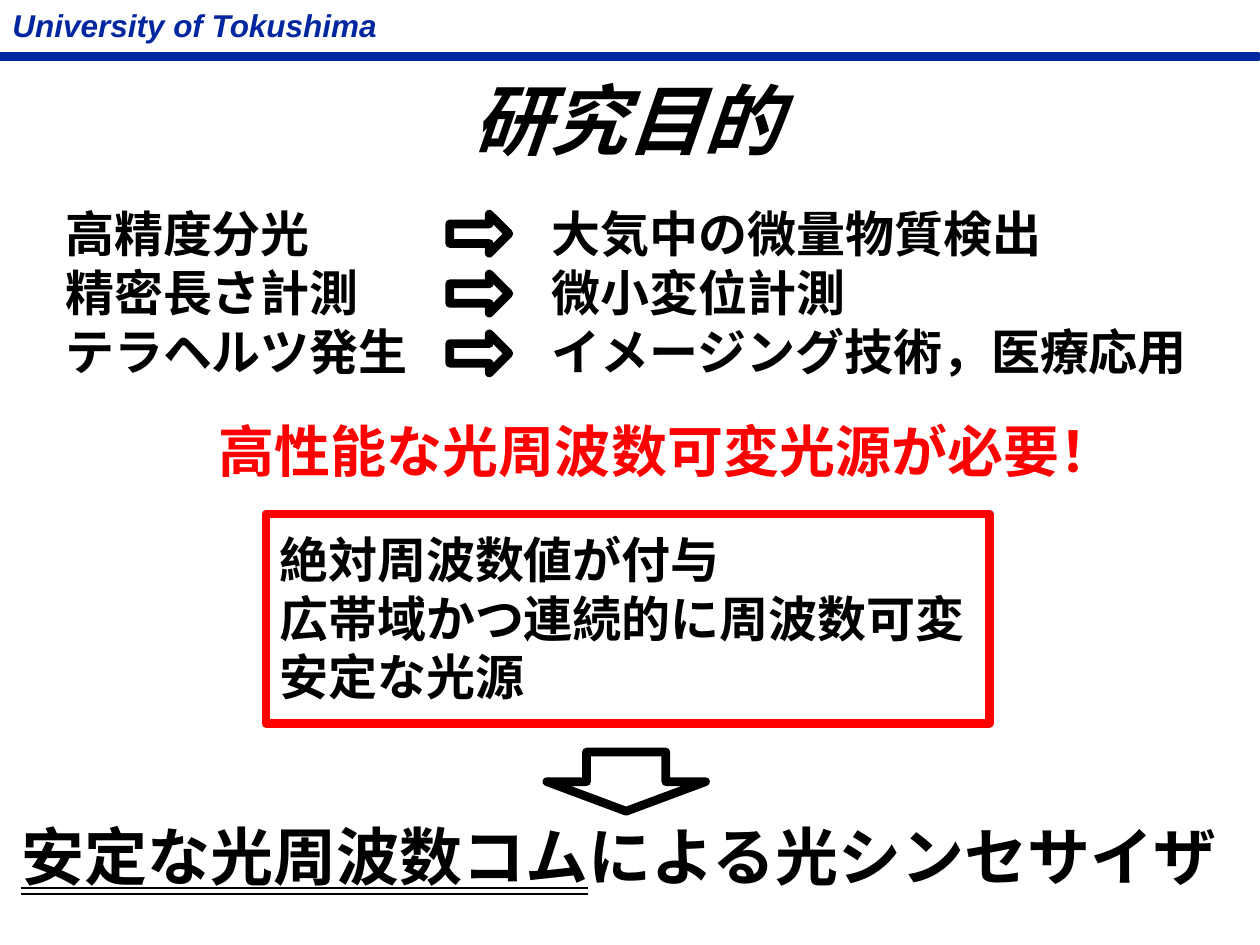
from pptx import Presentation
from pptx.dml.color import RGBColor
from pptx.enum import shapes, text
from pptx.util import Pt

BLACK, RED, NAVY = "000000", "FF0000", "00279F"
SHAPE = shapes.MSO_SHAPE


def write(frame, lines, size, color=BLACK, italic=False):
    """Fill a text frame; each line is a list of (text, underline) runs."""
    for i, line in enumerate(lines):
        paragraph = frame.paragraphs[0] if i == 0 else frame.add_paragraph()
        paragraph.line_spacing = Pt(round(size * 1.2, 1))
        for words, underline in line:
            run = paragraph.add_run()
            run.text = words
            font = run.font
            font.name, font.size = "Arial", Pt(size)
            font.bold, font.italic = True, italic
            font.underline = underline
            font.color.rgb = RGBColor.from_string(color)


def draw(kind, left, top, width, height, line, weight, fill=None):
    shape = slide.shapes.add_shape(kind, Pt(left), Pt(top), Pt(width), Pt(height))
    shape.shadow.inherit = False
    shape.line.color.rgb = RGBColor.from_string(line)
    shape.line.width = Pt(weight)
    if fill:
        shape.fill.solid()
        shape.fill.fore_color.rgb = RGBColor.from_string(fill)
    else:
        shape.fill.background()


prs = Presentation()
prs.slide_width, prs.slide_height = Pt(720), Pt(540)
slide = prs.slides.add_slide(prs.slide_layouts[5])

# Header band and title
draw(SHAPE.RECTANGLE, 0, 30.2, 719.3, 4.3, NAVY, 1, fill=NAVY)
title = slide.shapes.title
title.left, title.top, title.width, title.height = Pt(52), Pt(23), Pt(612), Pt(90)
title.text_frame.vertical_anchor = text.MSO_ANCHOR.MIDDLE
write(title.text_frame, [[("研究目的", None)]], 44, italic=True)
title.text_frame.paragraphs[0].alignment = text.PP_ALIGN.CENTER

# Each technique points to its application
for row in range(3):
    draw(SHAPE.RIGHT_ARROW, 257, 122.4 + 34.2 * row, 33.8, 22.3, BLACK, 5)

# Frame around the requirements, then the arrow to the conclusion
draw(SHAPE.RECTANGLE, 152, 293.8, 413.3, 119.5, RED, 5)
draw(SHAPE.DOWN_ARROW, 312.5, 429.8, 90.7, 33.8, BLACK, 5)

techniques = ["高精度分光", "精密長さ計測", "テラヘルツ発生"]
applications = ["大気中の微量物質検出", "微小変位計測", "イメージング技術，医療応用"]
requirements = ["絶対周波数値が付与", "広帯域かつ連続的に周波数可変", "安定な光源"]
conclusion = [("安定な光周波数コム", text.MSO_UNDERLINE.DOUBLE_LINE),
              ("による光シンセサイザ", None)]

texts = [
    (0, 0, 225, 29, [[("University of Tokushima", None)]], 18, NAVY, True),
    (30.2, 113, 213, 109, [[(t, None)] for t in techniques], 28, BLACK, False),
    (308.2, 113, 382, 109, [[(t, None)] for t in applications], 28, BLACK, False),
    (118, 234.7, 534, 46, [[("高性能な光周波数可変光源が必要！", None)]], 32, RED, False),
    (152.6, 299, 412, 109, [[(t, None)] for t in requirements], 28, BLACK, False),
    (5, 463.7, 708, 51, [conclusion], 36, BLACK, False),
]
for left, top, width, height, lines, size, color, italic in texts:
    box = slide.shapes.add_textbox(Pt(left), Pt(top), Pt(width), Pt(height))
    box.text_frame.word_wrap = False
    write(box.text_frame, lines, size, color, italic)

prs.save("out.pptx")
